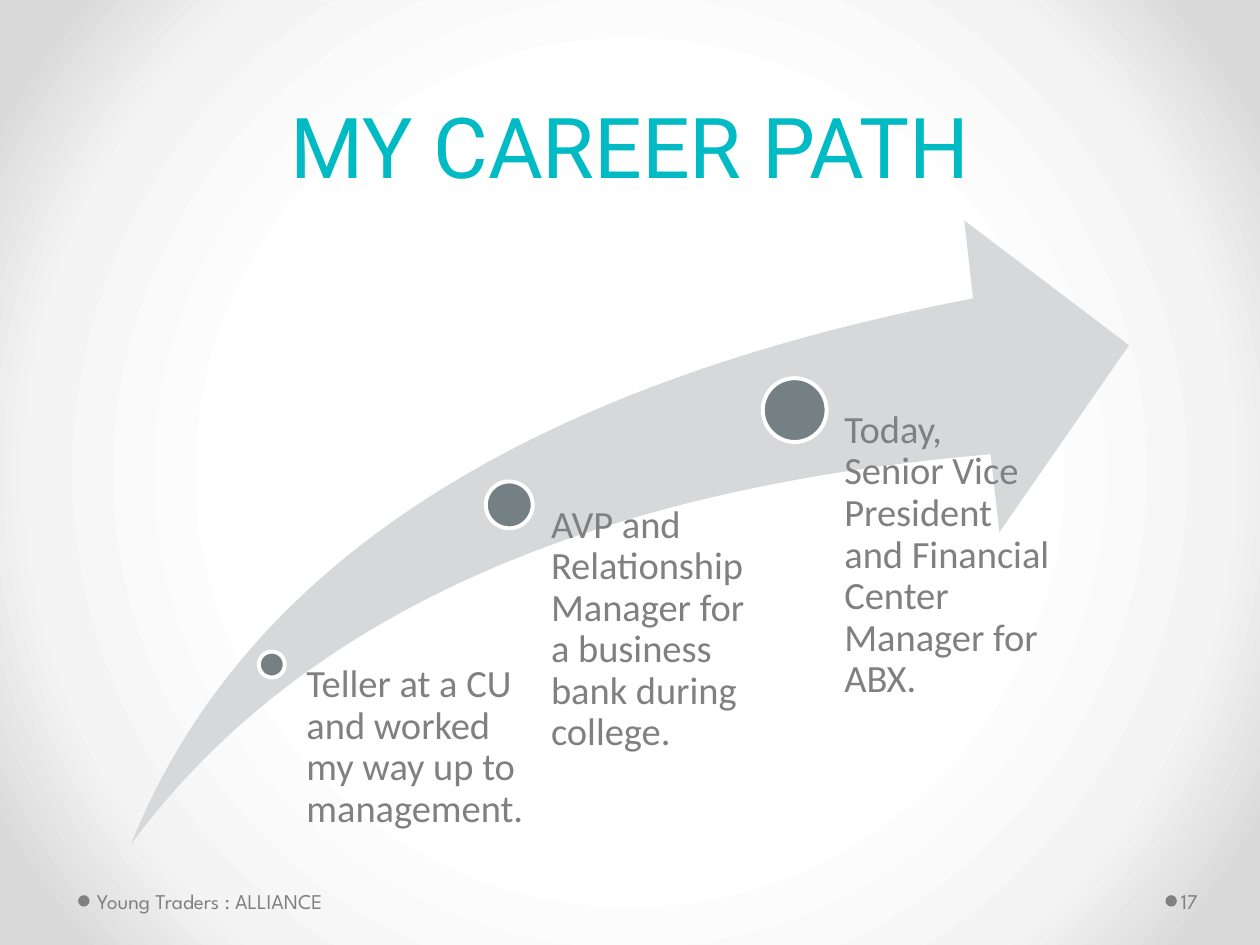
from collections import namedtuple

from lxml import etree
from pptx import Presentation
from pptx.dml.color import RGBColor
from pptx.enum.shapes import MSO_SHAPE
from pptx.enum.text import MSO_ANCHOR, PP_ALIGN
from pptx.oxml import parse_xml
from pptx.oxml.ns import nsdecls, qn
from pptx.util import Inches, Pt

TEAL = RGBColor(0x00, 0xBA, 0xC4)
GREY = RGBColor(0x80, 0x80, 0x80)
SLATE = RGBColor(0x75, 0x80, 0x85)
PALE = RGBColor(0xD6, 0xD8, 0xD9)
WHITE = RGBColor(0xFF, 0xFF, 0xFF)
BACKDROP = [(50, WHITE), (76, RGBColor(0xF4, 0xF4, 0xF4)),
            (92, RGBColor(0xDA, 0xDA, 0xDA))]

Box = namedtuple("Box", "left top width height")
SLIDE = Box(0, 0, 10, 7.5)

# Dot centre, dot diameter, label left and label width, in percent of the arrow box
Step = namedtuple("Step", "x y diameter label_left label_width text")
STEPS = [
    Step(14.1, 71.2, 2.6, 16.2, 23.4,
         "Teller at a CU and worked my way up to management."),
    Step(37.9, 45.6, 4.7, 39.6, 24,
         "AVP and Relationship Manager for a business bank during college."),
    Step(66.5, 30.4, 6.4, 68.1, 24,
         "Today, Senior Vice President and Financial Center Manager for ABX."),
]


def percent_box(parent, left, top, width, height):
    """Box inside parent, given in percent of its size."""
    return Box(parent.left + parent.width * left / 100,
               parent.top + parent.height * top / 100,
               parent.width * width / 100, parent.height * height / 100)


def add_preset(slide, kind, box, color):
    shape = slide.shapes.add_shape(kind, *map(Inches, box))
    shape.shadow.inherit = False
    shape.fill.solid()
    shape.fill.fore_color.rgb = color
    shape.line.fill.background()
    return shape


def add_text(slide, box, text, font, size, color=GREY, insets=(0.1, 0.05, 0.1, 0.05),
             anchor=MSO_ANCHOR.TOP, align=PP_ALIGN.LEFT, spacing=1.0):
    frame = slide.shapes.add_textbox(*map(Inches, box)).text_frame
    frame.word_wrap = True
    frame.vertical_anchor = anchor
    (frame.margin_left, frame.margin_top,
     frame.margin_right, frame.margin_bottom) = map(Inches, insets)
    frame.text = text
    paragraph = frame.paragraphs[0]
    paragraph.alignment = align
    paragraph.line_spacing = spacing
    run_font = paragraph.runs[0].font
    run_font.name, run_font.size = font, Pt(size)
    run_font.color.rgb = color


def paint_background(slide):
    """Radial gradient, white in the centre."""
    slide.background.fill.solid()
    properties = slide.element.find(".//" + qn("p:bgPr"))
    gradient = parse_xml(f'<a:gradFill {nsdecls("a")} rotWithShape="1"/>')
    stops = etree.SubElement(gradient, qn("a:gsLst"))
    for position, color in BACKDROP:
        stop = etree.SubElement(stops, qn("a:gs"), pos=str(position * 1000))
        etree.SubElement(stop, qn("a:srgbClr"), val=str(color))
    circle = etree.SubElement(gradient, qn("a:path"), {"path": "circle"})
    etree.SubElement(circle, qn("a:fillToRect"),
                     dict.fromkeys("ltrb", "50000"))
    properties.replace(properties.find(qn("a:solidFill")), gradient)


def add_title(slide, box):
    add_text(slide, box, "MY CAREER PATH", "Roboto", 48, TEAL,
             anchor=MSO_ANCHOR.BOTTOM, align=PP_ALIGN.CENTER, spacing=Pt(58))


def add_career_path(slide, box):
    arrow = add_preset(slide, MSO_SHAPE.SWOOSH_ARROW, box, PALE)
    arrow.adjustments[0] = arrow.adjustments[1] = 0.25
    for step in STEPS:
        # Dot on the arrow
        center = percent_box(box, step.x, step.y, 0, 0)
        diameter = box.width * step.diameter / 100
        dot = add_preset(slide, MSO_SHAPE.OVAL,
                         Box(center.left - diameter / 2, center.top - diameter / 2,
                             diameter, diameter), SLATE)
        dot.line.color.rgb = WHITE
        dot.line.width = Pt(2.25)
        # Label from the dot's centre down to the foot of the arrow
        label = percent_box(box, step.label_left, step.y,
                            step.label_width, 100 - step.y)
        add_text(slide, label, step.text, "Calibri", 22,
                 insets=(diameter * 0.53, 0, 0, 0), spacing=0.9)


def add_footer_item(slide, box, text, left_inset, right_inset):
    """Bullet dot at the left edge of the box, text after it."""
    dot = 0.09
    middle = box.top + box.height / 2
    add_preset(slide, MSO_SHAPE.OVAL, Box(box.left, middle - dot / 2, dot, dot), GREY)
    text_box = Box(box.left + dot, box.top, box.width - dot, box.height)
    add_text(slide, text_box, text, "League Spartan", 12, anchor=MSO_ANCHOR.MIDDLE,
             insets=(left_inset, 0.05, right_inset, 0.05))


def main():
    presentation = Presentation()
    presentation.slide_width = Inches(SLIDE.width)
    presentation.slide_height = Inches(SLIDE.height)
    slide = presentation.slides.add_slide(presentation.slide_layouts[6])
    paint_background(slide)
    add_title(slide, percent_box(SLIDE, 5, 2, 90, 19.33))
    add_career_path(slide, percent_box(SLIDE, 10.4, 23.33, 79.2, 66))
    add_footer_item(slide, percent_box(SLIDE, 6.2, 92.67, 32.1, 5.33),
                    "Young Traders : ALLIANCE", 0.06, 0.1)
    add_footer_item(slide, percent_box(SLIDE, 92.5, 92.67, 7, 5.33), "17", 0.03, 0.05)
    presentation.save("out.pptx")


if __name__ == "__main__":
    main()
